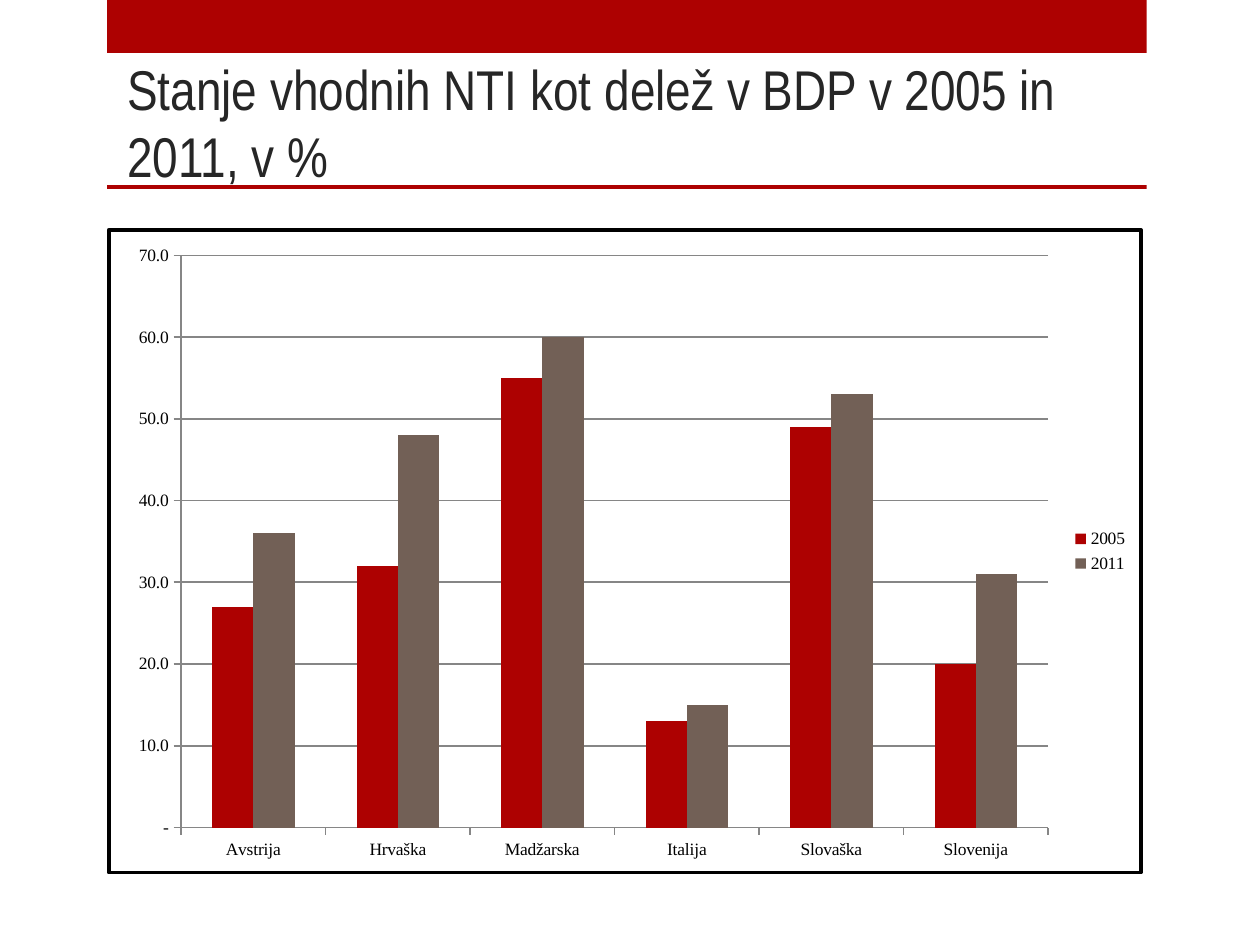
"""Build a slide comparing inward FDI stock as a share of GDP in 2005 and 2011."""
from lxml import etree
from pptx import Presentation
from pptx.chart.data import CategoryChartData
from pptx.dml.color import RGBColor
from pptx.enum.chart import XL_CHART_TYPE, XL_LEGEND_POSITION, XL_TICK_MARK
from pptx.enum.shapes import MSO_SHAPE
from pptx.enum.text import MSO_ANCHOR, MSO_AUTO_SIZE, PP_ALIGN
from pptx.oxml import parse_xml
from pptx.oxml.ns import nsdecls, qn
from pptx.util import Inches, Pt

COLUMN = XL_CHART_TYPE.COLUMN_CLUSTERED
RIGHT = XL_LEGEND_POSITION.RIGHT
OUT = XL_TICK_MARK.OUTSIDE
RECT = MSO_SHAPE.RECTANGLE
BOTTOM = MSO_ANCHOR.BOTTOM
LEFT = PP_ALIGN.LEFT
NO_FIT = MSO_AUTO_SIZE.NONE

COLORS = {"red": "AD0101", "brown": "726056", "ink": "262626",
          "black": "000000", "white": "FFFFFF", "grey": "868686"}
FORMAT = '#\\ ###\\ ##0.0;\\-#\\ ###\\ ##0.0;"-"'
LANDS = ["Avstrija", "Hrvaška", "Madžarska", "Italija", "Slovaška", "Slovenija"]
SERIES = [("2005", "red", [27, 32, 55, 13, 49, 20]),
          ("2011", "brown", [36, 48, 60, 15, 53, 31])]
PLOT = {"x": 0.07, "y": 0.04, "w": 0.84, "h": 0.89}


def color(name):
    return RGBColor.from_string(COLORS[name])


def place(shape, *box):
    shape.left, shape.top, shape.width, shape.height = map(Inches, box)


def add_bar(slide, top, height):
    bar = slide.shapes.add_shape(
        RECT, Inches(0.85), Inches(top), Inches(8.25), Inches(height))
    bar.shadow.inherit = False
    bar.fill.solid()
    bar.fill.fore_color.rgb = color("red")
    bar.line.fill.background()


def set_title(slide, text):
    title = slide.shapes.title
    place(title, 0.91, 0.76, 8.03, 0.79)
    frame = title.text_frame
    frame.text = text
    frame.word_wrap = True
    frame.auto_size = NO_FIT
    frame.vertical_anchor = BOTTOM
    para = frame.paragraphs[0]
    para.alignment = LEFT
    para.font.name = "Arial Narrow"
    para.font.size = Pt(32)
    para.font.color.rgb = color("ink")


def frame_chart(chart):
    border = parse_xml(
        f'<c:spPr {nsdecls("c", "a")}>'
        f'<a:solidFill><a:srgbClr val="{COLORS["white"]}"/></a:solidFill>'
        f'<a:ln w="{Pt(2)}"><a:solidFill><a:srgbClr val="{COLORS["black"]}"/>'
        '</a:solidFill></a:ln></c:spPr>')
    chart.element.find(qn("c:txPr")).addprevious(border)


def set_plot(chart):
    area = chart.element.find(".//" + qn("c:plotArea"))
    for old in area.findall(qn("c:layout")):
        area.remove(old)
    layout = etree.Element(qn("c:layout"))
    manual = etree.SubElement(layout, qn("c:manualLayout"))
    parts = {"layoutTarget": "inner", "xMode": "edge", "yMode": "edge", **PLOT}
    for tag, val in parts.items():
        etree.SubElement(manual, qn("c:" + tag)).set("val", str(val))
    area.insert(0, layout)


def set_line(line):
    line.color.rgb = color("grey")
    line.width = Pt(1)


def set_axes(chart):
    for axis in (chart.category_axis, chart.value_axis):
        axis.major_tick_mark = OUT
        set_line(axis.format.line)
    axis = chart.value_axis
    axis.minimum_scale, axis.maximum_scale, axis.major_unit = 0, 70, 10
    axis.has_major_gridlines = True
    set_line(axis.major_gridlines.format.line)
    axis.tick_labels.number_format = FORMAT
    axis.tick_labels.number_format_is_linked = False


def add_columns(slide):
    data = CategoryChartData(number_format=FORMAT)
    data.categories = LANDS
    for name, _, vals in SERIES:
        data.add_series(name, vals)
    chart = slide.shapes.add_chart(
        COLUMN, Inches(0.85), Inches(1.81), Inches(8.22), Inches(5.13), data).chart
    chart.has_title = False
    chart.font.name = "Times New Roman"
    chart.font.size = Pt(10)
    chart.font.color.rgb = color("black")
    chart.has_legend = True
    chart.legend.position = RIGHT
    chart.legend.include_in_layout = False
    plot = chart.plots[0]
    plot.gap_width, plot.overlap = 150, 0
    plot.vary_by_categories = False
    for series, (_, shade, _) in zip(plot.series, SERIES):
        series.format.fill.solid()
        series.format.fill.fore_color.rgb = color(shade)
    set_axes(chart)
    set_plot(chart)
    frame_chart(chart)


def main():
    deck = Presentation()
    deck.slide_width, deck.slide_height = Inches(10), Inches(7.5)
    slide = deck.slides.add_slide(deck.slide_layouts[5])
    add_bar(slide, 0, 0.42)
    add_bar(slide, 1.47, 0.03)
    set_title(slide, "Stanje vhodnih NTI kot delež v BDP v 2005 in 2011, v %")
    add_columns(slide)
    deck.save("out.pptx")


if __name__ == "__main__":
    main()
